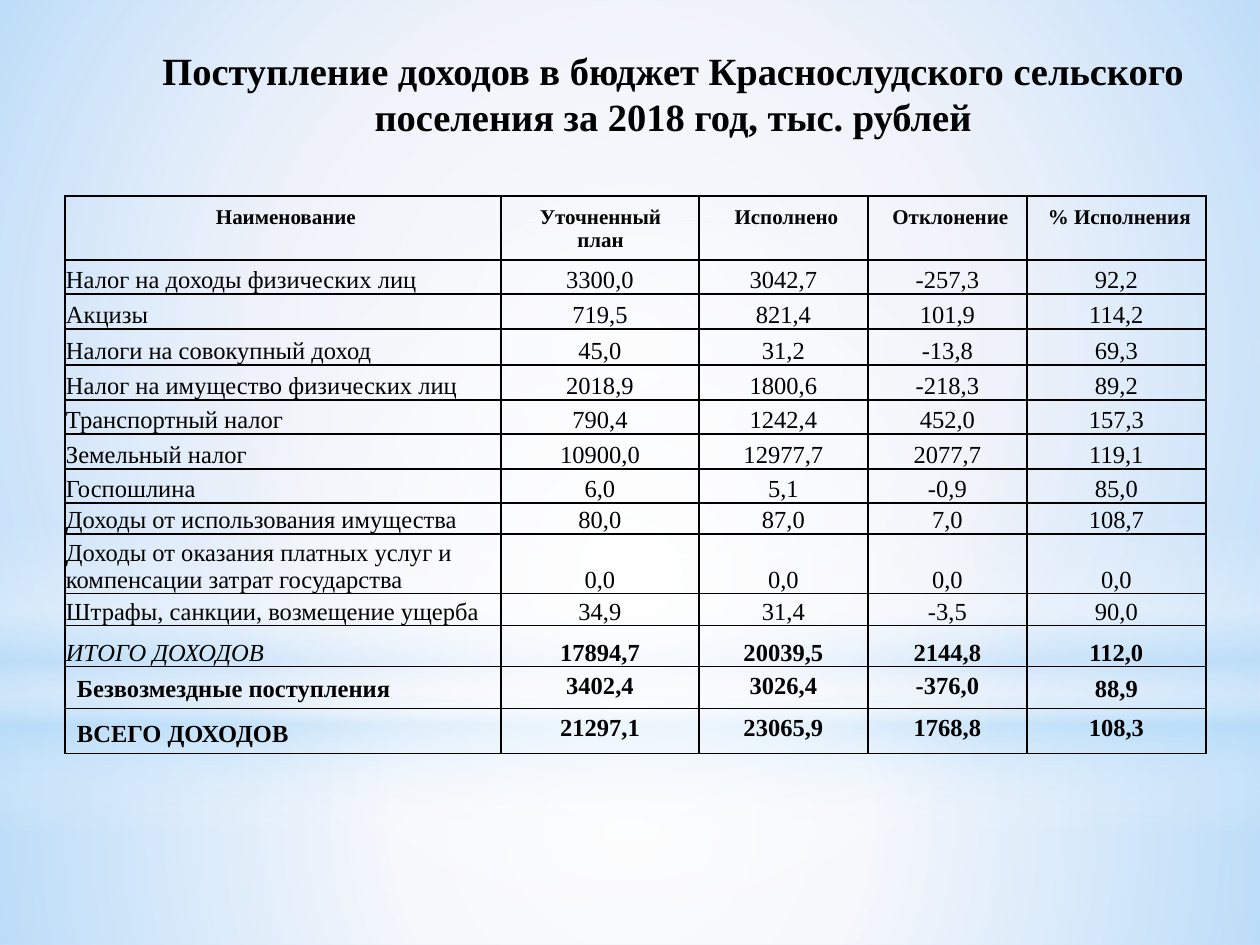
from pptx import Presentation
from pptx.dml.color import RGBColor
from pptx.enum.shapes import MSO_SHAPE
from pptx.enum.text import MSO_ANCHOR, PP_ALIGN
from pptx.oxml import parse_xml
from pptx.oxml.ns import nsdecls
from pptx.util import Emu, Pt

COLORS = {"text": "000000", "base": "DCE1F4", "white": "FFFFFF", "sky": "B4DCFA"}
FONT = "Times New Roman"
EMU_PER_PX = 914400 / 126
CIRCLE = ('<a:path path="circle"><a:fillToRect l="50000" t="50000" '
          'r="50000" b="50000"/></a:path>')
DOWNWARD = '<a:lin ang="5400000" scaled="0"/>'


def px(length):
    return Emu(round(length * EMU_PER_PX))


class BudgetSlide:
    def __init__(self, deck):
        self.slide = deck.slides.add_slide(deck.slide_layouts[5])
        backdrop = self.slide.background.fill
        backdrop.solid()
        backdrop.fore_color.rgb = RGBColor.from_string(COLORS["base"])

    def glow(self, preset, top, height, stops, direction):
        glow = self.slide.shapes.add_shape(preset, 0, px(top), px(1260), px(height))
        glow.shadow.inherit = False
        glow.line.fill.background()
        glow.fill.background()
        marks = "".join(
            f'<a:gs pos="{place * 1000}"><a:srgbClr val="{COLORS[color]}">'
            f'<a:alpha val="{opacity * 1000}"/></a:srgbClr></a:gs>'
            for place, color, opacity in stops)
        gradient = parse_xml(
            f'<a:gradFill {nsdecls("a")} rotWithShape="1">'
            f'<a:gsLst>{marks}</a:gsLst>{direction}</a:gradFill>')
        properties = glow.element.spPr
        properties.replace(properties.find("{*}noFill"), gradient)

    def wording(self, frame, text, size, bold=False, italic=False, align=PP_ALIGN.CENTER):
        paragraph = frame.paragraphs[0]
        paragraph.alignment = align
        run = paragraph.add_run()
        run.text = text
        font = run.font
        font.name, font.size, font.bold, font.italic = FONT, Pt(size), bold, italic
        font.color.rgb = RGBColor.from_string(COLORS["text"])

    def title(self, text, left, top, width, height):
        title = self.slide.shapes.title
        title.left, title.top, title.width, title.height = map(
            px, (left, top, width, height))
        frame = title.text_frame
        frame.word_wrap = True
        frame.vertical_anchor = MSO_ANCHOR.TOP
        frame.margin_top = px(8)
        self.wording(frame, text, 22, bold=True)
        self.slide.shapes.element.append(title.element)

    def border(self, cell):
        properties = cell._tc.get_or_add_tcPr()
        for position, side in enumerate(("lnL", "lnR", "lnT", "lnB")):
            properties.insert(position, parse_xml(
                f'<a:{side} {nsdecls("a")} w="12700"><a:solidFill>'
                f'<a:srgbClr val="{COLORS["text"]}"/></a:solidFill></a:{side}>'))

    def cell(self, cell, text, size, margins, anchor, **style):
        cell.fill.background()
        self.border(cell)
        (cell.margin_left, cell.margin_top,
         cell.margin_right, cell.margin_bottom) = map(px, margins)
        cell.vertical_anchor = anchor
        self.wording(cell.text_frame, text, size, **style)

    def table(self, left, top, widths, heights):
        table = self.slide.shapes.add_table(
            len(heights), len(widths), px(left), px(top),
            px(sum(widths)), px(sum(heights))).table
        table.first_row = table.horz_banding = False
        for column, width in zip(table.columns, widths):
            column.width = px(width)
        for row, height in zip(table.rows, heights):
            row.height = px(height)
        return table


HEADINGS = ("Наименование", "Уточненный план", "Исполнено", "Отклонение", "% Исполнения")
INCOME = (
    ("Налог на доходы физических лиц", "3300,0", "3042,7", "-257,3", "92,2"),
    ("Акцизы", "719,5", "821,4", "101,9", "114,2"),
    ("Налоги на совокупный доход", "45,0", "31,2", "-13,8", "69,3"),
    ("Налог на имущество физических лиц", "2018,9", "1800,6", "-218,3", "89,2"),
    ("Транспортный налог", "790,4", "1242,4", "452,0", "157,3"),
    ("Земельный налог", "10900,0", "12977,7", "2077,7", "119,1"),
    ("Госпошлина", "6,0", "5,1", "-0,9", "85,0"),
    ("Доходы от использования имущества", "80,0", "87,0", "7,0", "108,7"),
    ("Доходы от оказания платных услуг и компенсации затрат государства",
     "0,0", "0,0", "0,0", "0,0"),
    ("Штрафы, санкции, возмещение ущерба", "34,9", "31,4", "-3,5", "90,0"),
    ("ИТОГО ДОХОДОВ", "17894,7", "20039,5", "2144,8", "112,0"),
    ("Безвозмездные поступления", "3402,4", "3026,4", "-376,0", "88,9"),
    ("ВСЕГО ДОХОДОВ", "21297,1", "23065,9", "1768,8", "108,3"),
)
SUBTOTAL, GRANTS = 11, 12
COLUMN_WIDTHS = (436, 198, 169, 159, 179)
ROW_HEIGHTS = (64, 34, 35, 36, 35, 34, 35, 34, 31, 60, 32, 41, 42, 45)


def main():
    deck = Presentation()
    deck.slide_width, deck.slide_height = px(1260), px(945)
    budget = BudgetSlide(deck)
    budget.glow(MSO_SHAPE.RECTANGLE, 703, 242,
                ((0, "white", 91), (37, "white", 76), (100, "sky", 79)), CIRCLE)
    budget.glow(MSO_SHAPE.RECTANGLE, 0, 703,
                ((0, "white", 89), (48, "white", 62), (100, "sky", 79)), CIRCLE)
    budget.glow(MSO_SHAPE.RECTANGLE, 519, 315,
                ((0, "white", 0), (29, "white", 30), (45, "sky", 40),
                 (55, "white", 26), (65, "sky", 60), (100, "white", 0)), DOWNWARD)
    budget.glow(MSO_SHAPE.OVAL, 220, 703,
                ((0, "white", 100), (56, "white", 0)), CIRCLE)
    budget.title("Поступление доходов в бюджет Краснослудского сельского "
                 "поселения за 2018 год, тыс. рублей", 98, 39, 1150, 152)

    table = budget.table(65, 196, COLUMN_WIDTHS, ROW_HEIGHTS)
    for column, heading in enumerate(HEADINGS):
        left_margin = 13 if column == 1 else 18
        budget.cell(table.cell(0, column), heading, 12, (left_margin, 10, 12, 6),
                    MSO_ANCHOR.TOP, bold=True)
    for row, entries in enumerate(INCOME, 1):
        wide = row >= GRANTS
        margins = (12, 6, 12, 6) if wide else (1, 1, 1, 0)
        for column, entry in enumerate(entries):
            named = column == 0
            raised = wide and not named and (row, column) != (GRANTS, 4)
            budget.cell(table.cell(row, column), entry, 14, margins,
                        MSO_ANCHOR.TOP if raised else MSO_ANCHOR.BOTTOM,
                        bold=wide or (row == SUBTOTAL and not named),
                        italic=row == SUBTOTAL and named,
                        align=PP_ALIGN.LEFT if named else PP_ALIGN.CENTER)
    deck.save("out.pptx")


if __name__ == "__main__":
    main()
